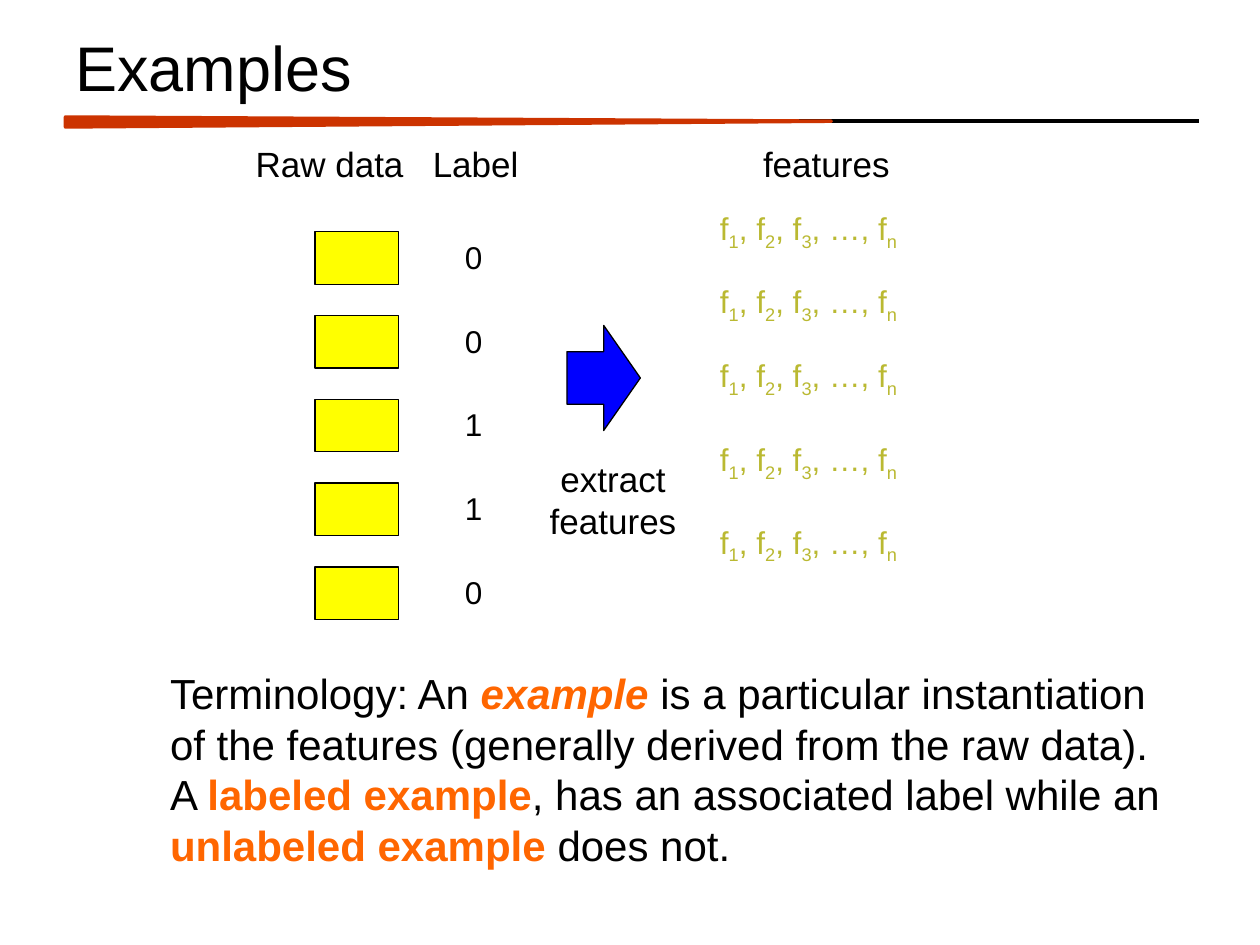
"""Build the slide that shows raw data and labels turned into features."""

from dataclasses import dataclass

from pptx import Presentation
from pptx.dml.color import RGBColor
from pptx.enum.shapes import MSO_CONNECTOR, MSO_SHAPE
from pptx.enum.text import MSO_ANCHOR, MSO_AUTO_SIZE, PP_ALIGN
from pptx.oxml.ns import qn
from pptx.shapes.autoshape import Shape
from pptx.slide import Slide
from pptx.util import Cm, Pt
from lxml.etree import SubElement


@dataclass(frozen=True)
class Theme:
    font: str = "Arial"
    black: str = "000000"
    rule: str = "CC3300"
    data: str = "FFFF00"
    arrow: str = "0000FF"
    feature: str = "BAB932"
    term: str = "FF6600"
    title_size: float = 36
    body_size: float = 24
    heading_size: float = 20
    value_size: float = 18
    rule_width: float = 2
    outline_width: float = 0.75


@dataclass(frozen=True)
class Box:
    left: float
    top: float
    width: float
    height: float

    def lengths(self) -> tuple[Cm, Cm, Cm, Cm]:
        return Cm(self.left), Cm(self.top), Cm(self.width), Cm(self.height)


@dataclass(frozen=True)
class Span:
    text: str
    color: str
    bold: bool = False
    italic: bool = False
    subscript: bool = False


@dataclass(frozen=True)
class Heading:
    text: str
    box: Box


THEME = Theme()
ROW_TOP = 4.67
ROW_PITCH = 1.69
LABELS = ["0", "0", "1", "1", "0"]
FEATURE_TOPS = [4.09, 5.56, 7.06, 8.74, 10.41]
HEADINGS = [
    Heading("Raw data", Box(4.88, 2.74, 3.53, 1.12)),
    Heading("Label", Box(8.46, 2.74, 2.26, 1.12)),
    Heading("features", Box(15.11, 2.74, 3.1, 1.12)),
    Heading("extract\nfeatures", Box(10.8, 9.09, 3.12, 1.96)),
]
FEATURE_SPANS = [
    Span(text, THEME.feature, subscript=text in ("1", "2", "3", "n"))
    for text in ("f", "1", ", f", "2", ", f", "3", ", …, f", "n")
]
TERMINOLOGY = [
    Span("Terminology: An ", THEME.black),
    Span("example ", THEME.term, bold=True, italic=True),
    Span("is a particular instantiation of the features "
         "(generally derived from the raw data).  A ", THEME.black),
    Span("labeled example", THEME.term, bold=True),
    Span(", has an associated label while an ", THEME.black),
    Span("unlabeled example", THEME.term, bold=True),
    Span(" does not.", THEME.black),
]


def format_run(run, size: float, color: str) -> None:
    run.font.name = THEME.font
    run.font.size = Pt(size)
    run.font.color.rgb = RGBColor.from_string(color)


def add_text(slide: Slide, box: Box, text: str, size: float, wrap: bool = False) -> Shape:
    shape = slide.shapes.add_textbox(*box.lengths())
    text_frame = shape.text_frame
    text_frame.word_wrap = wrap
    text_frame.auto_size = MSO_AUTO_SIZE.NONE if wrap else MSO_AUTO_SIZE.SHAPE_TO_FIT_TEXT
    text_frame.text = text
    for paragraph in text_frame.paragraphs:
        paragraph.alignment = PP_ALIGN.LEFT if wrap else PP_ALIGN.CENTER
        for run in paragraph.runs:
            format_run(run, size, THEME.black)
    return shape


def add_spans(slide: Slide, box: Box, spans: list[Span], size: float, wrap: bool = False) -> None:
    paragraph = add_text(slide, box, "", size, wrap).text_frame.paragraphs[0]
    for span in spans:
        run = paragraph.add_run()
        run.text = span.text
        format_run(run, size, span.color)
        run.font.bold = span.bold
        run.font.italic = span.italic
        if span.subscript:
            run._r.get_or_add_rPr().set("baseline", "-25000")


def add_block(slide: Slide, kind: MSO_SHAPE, box: Box, fill: str,
              line: str = THEME.black, width: float = THEME.outline_width) -> Shape:
    shape = slide.shapes.add_shape(kind, *box.lengths())
    shape.shadow.inherit = False
    shape.fill.solid()
    shape.fill.fore_color.rgb = RGBColor.from_string(fill)
    shape.line.color.rgb = RGBColor.from_string(line)
    shape.line.width = Pt(width)
    return shape


def add_title(slide: Slide) -> None:
    line = slide.shapes.add_connector(
        MSO_CONNECTOR.STRAIGHT, Cm(1.32), Cm(2.44), Cm(24.18), Cm(2.44))
    line.line.color.rgb = RGBColor.from_string(THEME.black)
    line.line.width = Pt(THEME.rule_width)
    SubElement(line._element.spPr, qn("a:effectLst"))
    wedge = add_block(slide, MSO_SHAPE.ISOSCELES_TRIANGLE, Box(8.94, -5.26, 0.2, 15.44),
                      THEME.rule, THEME.rule, THEME.rule_width)
    wedge.adjustments[0] = 0.42
    wedge.rotation = 90
    title = add_text(slide, Box(1.27, 0.43, 22.86, 1.83), "Examples", THEME.title_size, wrap=True)
    title.text_frame.vertical_anchor = MSO_ANCHOR.MIDDLE


def main() -> None:
    presentation = Presentation()
    presentation.slide_width = Cm(25.4)
    presentation.slide_height = Cm(19.05)
    slide = presentation.slides.add_slide(presentation.slide_layouts[6])
    add_title(slide)
    for heading in HEADINGS:
        add_text(slide, heading.box, heading.text, THEME.heading_size)
    for row, label in enumerate(LABELS):
        top = ROW_TOP + row * ROW_PITCH
        add_block(slide, MSO_SHAPE.RECTANGLE, Box(6.35, top, 1.69, 1.06), THEME.data)
        add_text(slide, Box(9.12, top, 0.86, 1.02), label, THEME.value_size)
    add_block(slide, MSO_SHAPE.RIGHT_ARROW, Box(11.43, 6.56, 1.48, 2.12), THEME.arrow)
    for top in FEATURE_TOPS:
        add_spans(slide, Box(14.18, top, 4.24, 1.02), FEATURE_SPANS, THEME.value_size)
    add_spans(slide, Box(3.18, 13.34, 20.75, 4.37), TERMINOLOGY, THEME.body_size, wrap=True)
    presentation.save("out.pptx")


if __name__ == "__main__":
    main()
